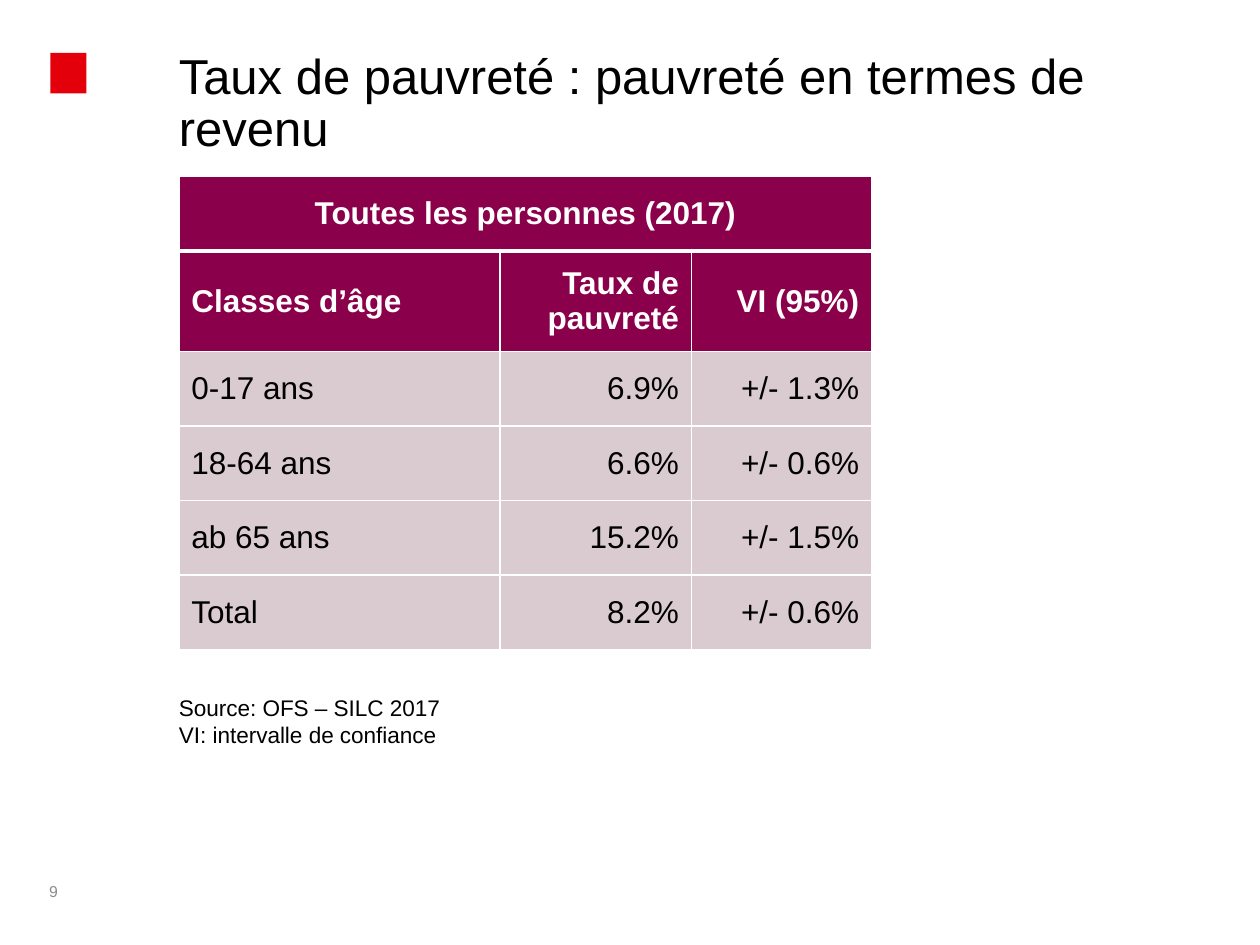
import pptx
import pptx.dml.color
import pptx.enum.shapes
import pptx.enum.text
import pptx.oxml
import pptx.oxml.ns
import pptx.util

Pt = pptx.util.Pt
ALIGN = pptx.enum.text.PP_ALIGN
ANCHOR = pptx.enum.text.MSO_ANCHOR

TITLE = "Taux de pauvreté : pauvreté en termes de revenu"
TABLE_TITLE = "Toutes les personnes (2017)"
ROWS = [
    ("Classes d’âge", "Taux de pauvreté", "VI (95%)"),
    ("0-17 ans", "6.9%", "+/- 1.3%"),
    ("18-64 ans", "6.6%", "+/- 0.6%"),
    ("ab 65 ans", "15.2%", "+/- 1.5%"),
    ("Total", "8.2%", "+/- 0.6%"),
]
SOURCE = "Source: OFS – SILC 2017\vVI: intervalle de confiance"
PAGE_NUMBER = "9"

LEFT = 102.2
COLUMN_WIDTHS = (183.5, 109.5, 103)
HEADER_HEIGHT = 57.6
ROW_HEIGHT = 42.6
ROW_HEIGHTS = [ROW_HEIGHT, HEADER_HEIGHT] + [ROW_HEIGHT] * (len(ROWS) - 1)

HEADER_FILL, BODY_FILL = "8B004B", "DACBD0"
WHITE, BLACK, GREY, RED = "FFFFFF", "000000", "8C8C8C", "E3000B"


def rgb(color):
    return pptx.dml.color.RGBColor.from_string(color)


def write(frame, text, size=18, color=BLACK, bold=False, align=ALIGN.LEFT,
          anchor=ANCHOR.TOP, line_spacing=None, margin=None):
    frame.word_wrap = True
    frame.vertical_anchor = anchor
    if margin is not None:
        frame.margin_left = frame.margin_right = Pt(margin)
        frame.margin_top = frame.margin_bottom = Pt(margin)
    frame.text = text
    paragraph = frame.paragraphs[0]
    paragraph.alignment = align
    paragraph.line_spacing = line_spacing
    for run in paragraph.runs:
        run.font.name = "Arial"
        run.font.size = Pt(size)
        run.font.bold = bold
        run.font.color.rgb = rgb(color)


def place(shape, left, top, width, height):
    shape.left, shape.top = Pt(left), Pt(top)
    shape.width, shape.height = Pt(width), Pt(height)


def set_borders(cell, top=1, bottom=1):
    """Draw white borders; the widths are in points."""
    properties = cell._tc.get_or_add_tcPr()
    widths = {"lnL": 1, "lnR": 1, "lnT": top, "lnB": bottom}
    for index, (tag, width) in enumerate(widths.items()):
        properties.insert(index, pptx.oxml.parse_xml(
            f'<a:{tag} {pptx.oxml.ns.nsdecls("a")} w="{Pt(width)}"><a:solidFill>'
            f'<a:srgbClr val="{WHITE}"/></a:solidFill></a:{tag}>'))


def add_rate_table(slide):
    table = slide.shapes.add_table(
        len(ROW_HEIGHTS), len(COLUMN_WIDTHS), Pt(LEFT), Pt(100.8),
        Pt(sum(COLUMN_WIDTHS)), Pt(sum(ROW_HEIGHTS))).table
    for column, width in zip(table.columns, COLUMN_WIDTHS):
        column.width = Pt(width)
    for row, height in zip(table.rows, ROW_HEIGHTS):
        row.height = Pt(height)

    table.cell(0, 0).merge(table.cell(0, len(COLUMN_WIDTHS) - 1))
    contents = [(TABLE_TITLE, "", "")] + ROWS
    for row_index, texts in enumerate(contents):
        header = row_index < 2
        for column_index, text in enumerate(texts):
            cell = table.cell(row_index, column_index)
            cell.fill.solid()
            cell.fill.fore_color.rgb = rgb(HEADER_FILL if header else BODY_FILL)
            set_borders(cell, top=3 if row_index == 1 else 1,
                        bottom=3 if row_index == 0 else 1)
            cell.vertical_anchor = ANCHOR.MIDDLE
            if row_index == 0:
                align = ALIGN.CENTER
            else:
                align = ALIGN.RIGHT if column_index else ALIGN.LEFT
            if text:
                write(cell.text_frame, text, color=WHITE if header else BLACK,
                      bold=header, align=align, anchor=ANCHOR.MIDDLE)


def add_text(slide, text, left, top, width, height, **text_format):
    box = slide.shapes.add_textbox(Pt(left), Pt(top), Pt(width), Pt(height))
    write(box.text_frame, text, margin=0, **text_format)


def main():
    presentation = pptx.Presentation()
    presentation.slide_width, presentation.slide_height = Pt(720), Pt(540)
    slide = presentation.slides.add_slide(presentation.slide_layouts[5])

    emblem = slide.shapes.add_shape(
        pptx.enum.shapes.MSO_SHAPE.RECTANGLE, Pt(28.8), Pt(30.2), Pt(20.6), Pt(23.2))
    emblem.shadow.inherit = False
    emblem.fill.solid()
    emblem.fill.fore_color.rgb = rgb(RED)
    emblem.line.fill.background()

    title = slide.shapes.title
    place(title, LEFT, 29.5, 589.7, 70.6)
    title.text_frame.auto_size = pptx.enum.text.MSO_AUTO_SIZE.NONE
    write(title.text_frame, TITLE, size=28, line_spacing=0.9, margin=0)

    add_text(slide, PAGE_NUMBER, 28.1, 500.4, 42.5, 14.4,
             size=9, color=GREY, anchor=ANCHOR.BOTTOM)
    add_rate_table(slide)
    add_text(slide, SOURCE, LEFT, 396.7, 159.8, 36.7, size=12.9)

    presentation.save("out.pptx")


if __name__ == "__main__":
    main()
